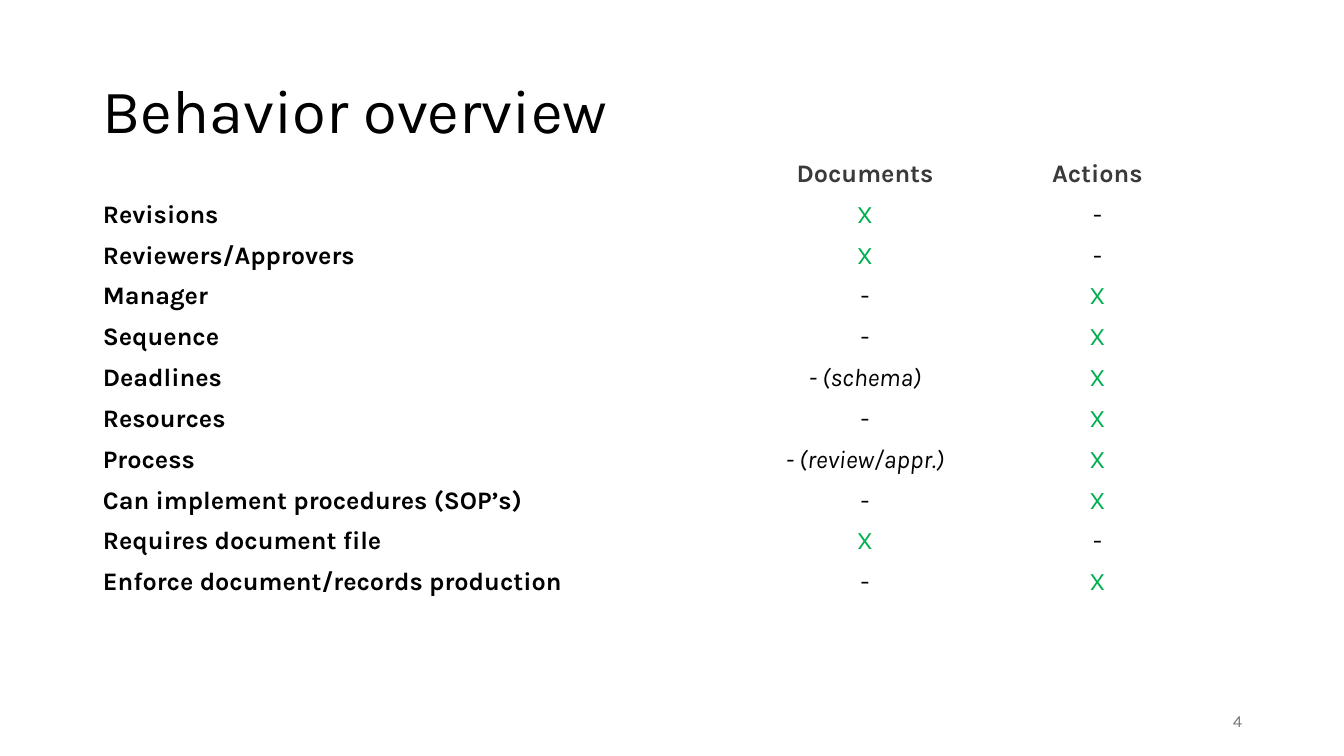
from pptx import Presentation
from pptx.dml.color import RGBColor
from pptx.enum import text
from pptx.util import Inches, Pt

BLACK = RGBColor(0x00, 0x00, 0x00)
CHARCOAL = RGBColor(0x3B, 0x3A, 0x3A)
GRAY = RGBColor(0x79, 0x79, 0x79)
GREEN = RGBColor(0x00, 0xB0, 0x50)
LEFT, CENTER, RIGHT = text.PP_ALIGN.LEFT, text.PP_ALIGN.CENTER, text.PP_ALIGN.RIGHT


def write(frame, words, size=18, color=BLACK, bold=False, italic=False,
          align=LEFT, line_spacing=None):
    paragraph = frame.paragraphs[0]
    paragraph.alignment = align
    paragraph.line_spacing = line_spacing
    span = paragraph.add_run()
    span.text = words
    span.font.name = "Karla"
    span.font.size = Pt(size)
    span.font.color.rgb = color
    span.font.bold = bold
    span.font.italic = italic


deck = Presentation()
deck.slide_width = Inches(13.33)
deck.slide_height = Inches(7.5)
page = deck.slides.add_slide(deck.slide_layouts[6])

# Title and page number
for words, place, style in [
    ("Behavior overview", (0.92, 0.4, 11.5, 1.45), dict(size=44, line_spacing=0.9)),
    ("4", (9.42, 6.95, 3, 0.4), dict(size=12, color=GRAY, align=RIGHT)),
]:
    box = page.shapes.add_textbox(*[Inches(length) for length in place])
    box.text_frame.word_wrap = True
    box.text_frame.vertical_anchor = text.MSO_ANCHOR.MIDDLE
    write(box.text_frame, words, **style)

# Comparison table
rows = [
    ("", "Documents", "Actions"),
    ("Revisions", "X", "-"),
    ("Reviewers/Approvers", "X", "-"),
    ("Manager", "-", "X"),
    ("Sequence", "-", "X"),
    ("Deadlines", "- (schema)", "X"),
    ("Resources", "-", "X"),
    ("Process", "- (review/appr.)", "X"),
    ("Can implement procedures (SOP’s)", "-", "X"),
    ("Requires document file", "X", "-"),
    ("Enforce document/records production", "-", "X"),
]
column_widths = (6.49, 2.34, 2.27)
table = page.shapes.add_table(
    len(rows), len(column_widths),
    Inches(0.92), Inches(1.53), Inches(sum(column_widths)), Inches(4.46),
).table
table.first_row = False
table.horz_banding = False
for column, width in zip(table.columns, column_widths):
    column.width = Inches(width)

for row_index, row in enumerate(rows):
    for column_index, words in enumerate(row):
        cell = table.cell(row_index, column_index)
        cell.fill.background()
        if not words:
            continue
        is_header = row_index == 0
        color = CHARCOAL if is_header else GREEN if words == "X" else BLACK
        write(cell.text_frame, words, color=color,
              bold=is_header or column_index == 0,
              italic=words.startswith("- ("),
              align=CENTER if column_index else LEFT)

deck.save("out.pptx")
